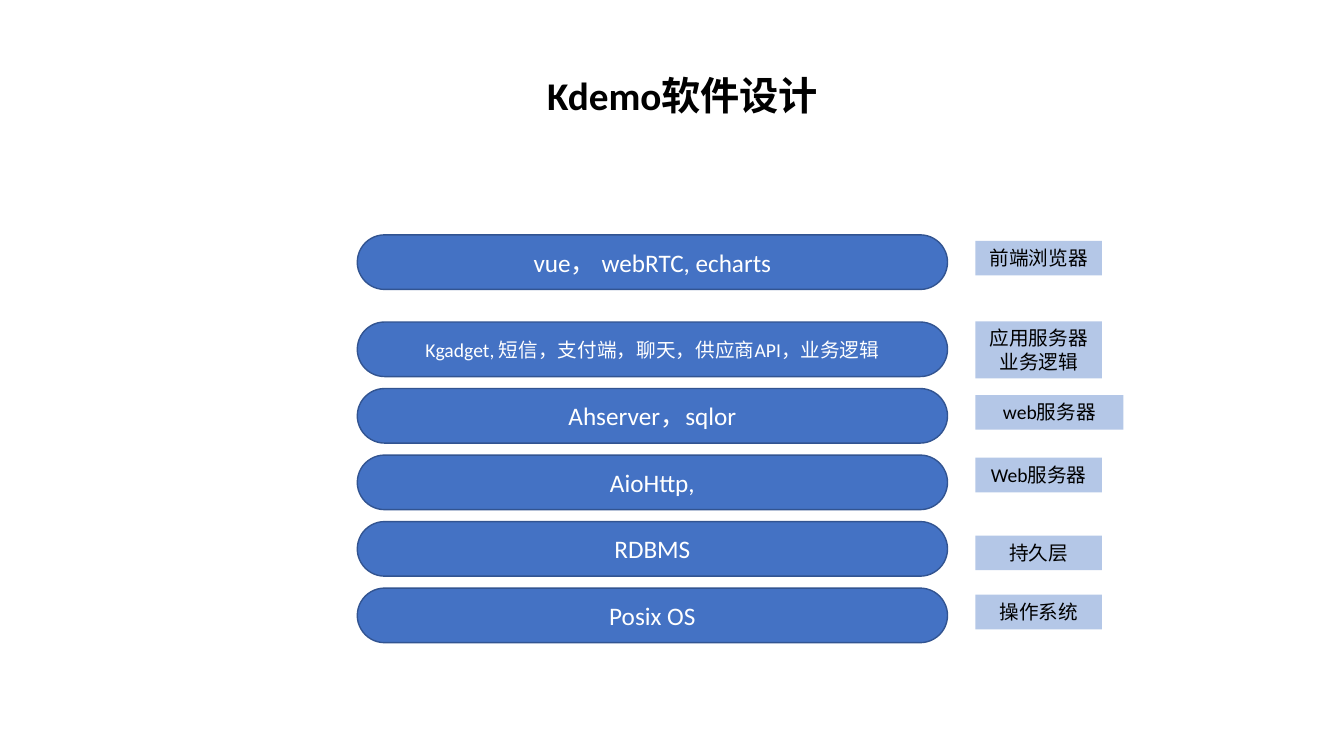
from dataclasses import dataclass

from pptx import Presentation, util as u
from pptx.dml.color import RGBColor
from pptx.enum import shapes, text
from pptx.shapes.autoshape import Shape
from pptx.slide import Slide

SLIDE_WIDTH, SLIDE_HEIGHT = 13.33, 7.5
COLUMN = SLIDE_WIDTH / 12
ROW = 0.66
FONT = "Calibri"
COLORS = {
    "layer": "4472C4",
    "layer_line": "325491",
    "label": "B4C7E7",
    "light": "FFFFFF",
    "dark": "000000",
}


@dataclass
class Layer:
    words: str
    row: float
    size: int = 18
    column: float = 3.19
    columns: float = 5.27
    rows: float = 0.82


@dataclass
class Label:
    words: str
    row: float
    columns: float = 1.13
    rows: float = 0.52
    column: float = 8.71


LAYERS = [
    Layer("vue， webRTC, echarts", 3.53),
    Layer("Kgadget, 短信，支付端，聊天，供应商API，业务逻辑", 4.84, size=14),
    Layer("Ahserver，sqlor", 5.84),
    Layer("AioHttp,", 6.84),
    Layer("RDBMS", 7.84),
    Layer("Posix OS", 8.84),
]
LABELS = [
    Label("前端浏览器", 3.62),
    Label("应用服务器\n业务逻辑", 4.83, rows=0.86),
    Label("web服务器", 5.94, columns=1.32),
    Label("Web服务器", 6.88),
    Label("持久层", 8.05),
    Label("操作系统", 8.94),
]


def color(name: str) -> RGBColor:
    return RGBColor.from_string(COLORS[name])


def grid_box(column: float, row: float, columns: float, rows: float) -> list[u.Length]:
    return [u.Inches(column * COLUMN), u.Inches(row * ROW),
            u.Inches(columns * COLUMN), u.Inches(rows * ROW)]


def write(shape: Shape, words: str, size: int, ink: str, bold: bool = False) -> None:
    frame = shape.text_frame
    frame.text = words
    frame.word_wrap = True
    for paragraph in frame.paragraphs:
        paragraph.alignment = text.PP_ALIGN.CENTER
        paragraph.font.name = FONT
        paragraph.font.size = u.Pt(size)
        paragraph.font.bold = bold
        paragraph.font.color.rgb = color(ink)


def add_block(slide: Slide, block: Layer | Label, kind: shapes.MSO_SHAPE, fill: str) -> Shape:
    shape = slide.shapes.add_shape(
        kind, *grid_box(block.column, block.row, block.columns, block.rows))
    shape.shadow.inherit = False
    shape.fill.solid()
    shape.fill.fore_color.rgb = color(fill)
    return shape


def add_layer(slide: Slide, layer: Layer) -> None:
    shape = add_block(slide, layer, shapes.MSO_SHAPE.ROUNDED_RECTANGLE, "layer")
    shape.adjustments[0] = 0.5
    shape.line.color.rgb = color("layer_line")
    shape.line.width = u.Pt(1)
    write(shape, layer.words, layer.size, "light")
    shape.text_frame.vertical_anchor = text.MSO_ANCHOR.MIDDLE


def add_label(slide: Slide, label: Label) -> None:
    shape = add_block(slide, label, shapes.MSO_SHAPE.RECTANGLE, "label")
    shape.line.fill.background()
    write(shape, label.words, 14, "dark")
    shape.text_frame.vertical_anchor = text.MSO_ANCHOR.TOP
    shape.text_frame.auto_size = text.MSO_AUTO_SIZE.SHAPE_TO_FIT_TEXT


def set_title(slide: Slide, words: str) -> None:
    title = slide.shapes.title
    title.left, title.top, title.width, title.height = grid_box(4.31, 1, 3.57, 0.86)
    write(title, words, 28, "dark", bold=True)
    title.text_frame.vertical_anchor = text.MSO_ANCHOR.TOP
    title.text_frame.auto_size = text.MSO_AUTO_SIZE.SHAPE_TO_FIT_TEXT


def main() -> None:
    presentation = Presentation()
    presentation.slide_width = u.Inches(SLIDE_WIDTH)
    presentation.slide_height = u.Inches(SLIDE_HEIGHT)
    slide = presentation.slides.add_slide(presentation.slide_layouts.get_by_name("Title Only"))
    set_title(slide, "Kdemo软件设计")
    for layer in LAYERS:
        add_layer(slide, layer)
    for label in LABELS:
        add_label(slide, label)
    presentation.save("out.pptx")


if __name__ == "__main__":
    main()
